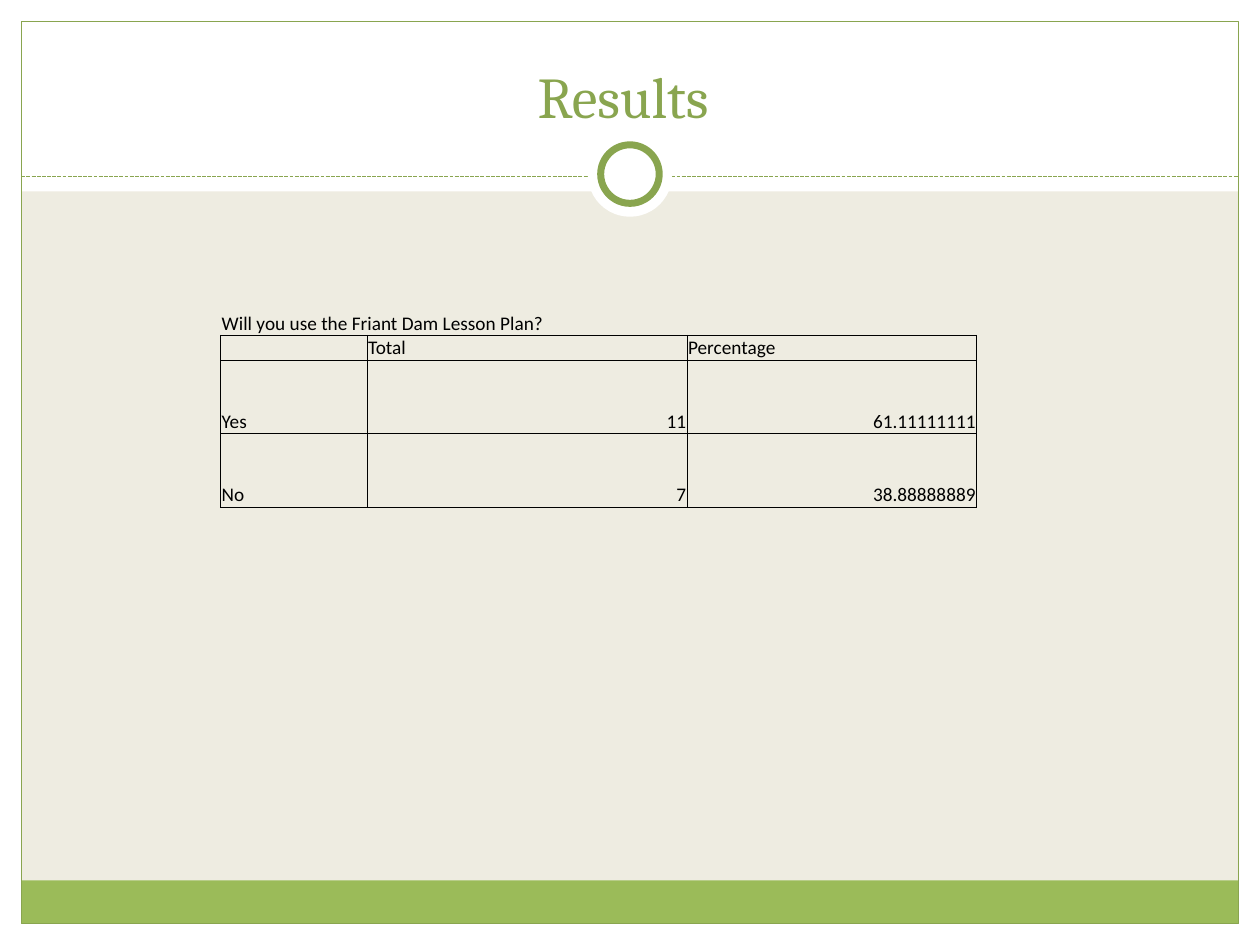
"""Build the Results slide with its survey table."""
from lxml.etree import SubElement
from pptx import Presentation
from pptx.dml.color import RGBColor
from pptx.enum.dml import MSO_LINE
from pptx.enum.shapes import MSO_CONNECTOR, MSO_SHAPE
from pptx.enum.text import MSO_ANCHOR as ANCHOR, PP_ALIGN as ALIGN
from pptx.oxml.ns import qn
from pptx.util import Cm, Pt

WHITE = RGBColor(0xFF, 0xFF, 0xFF)
BLACK = RGBColor(0, 0, 0)
BEIGE = RGBColor(0xEE, 0xEC, 0xE1)
GREEN = RGBColor(0x9B, 0xBB, 0x59)
DARK_GREEN = RGBColor(0x89, 0xA5, 0x4F)
RECT, OVAL = MSO_SHAPE.RECTANGLE, MSO_SHAPE.OVAL
WIDTH, HEIGHT, EDGE = 25.4, 19.05, 0.43
INNER = WIDTH - 2 * EDGE


def set_border(cell, side, visible):
    ln = SubElement(cell._tc.get_or_add_tcPr(), qn(f"a:ln{side}"), w=str(Pt(0.5)))
    if visible:
        fill = SubElement(ln, qn("a:solidFill"))
        SubElement(fill, qn("a:srgbClr"), val=str(BLACK))
    else:
        SubElement(ln, qn("a:noFill"))


prs = Presentation()
prs.slide_width, prs.slide_height = Cm(WIDTH), Cm(HEIGHT)
s = prs.slides.add_slide(prs.slide_layouts[5])
s.background.fill.solid()
s.background.fill.fore_color.rgb = BEIGE

dash = s.shapes.add_connector(MSO_CONNECTOR.STRAIGHT, Cm(EDGE), Cm(3.56), Cm(WIDTH - EDGE), Cm(3.56))
dash.line.color.rgb = DARK_GREEN
dash.line.width = Pt(0.75)
dash.line.dash_style = MSO_LINE.SQUARE_DOT
SubElement(dash._element.spPr, qn("a:effectLst"))

frame_parts = [
    (RECT, 0, HEIGHT - EDGE, WIDTH, EDGE, WHITE, None),
    (RECT, 0, 0, WIDTH, 3.86, WHITE, None),
    (RECT, 0, 0, EDGE, HEIGHT, WHITE, None),
    (RECT, WIDTH - EDGE, 0, EDGE, HEIGHT, WHITE, None),
    (RECT, EDGE, 17.75, INNER, 0.87, GREEN, None),
    (RECT, EDGE, EDGE, INNER, HEIGHT - 2 * EDGE, None, 0.75),
    (OVAL, 11.85, 2.67, 1.7, 1.7, WHITE, None),
    (OVAL, 12.11, 2.92, 1.18, 1.18, WHITE, 4),
]
for kind, x, y, w, h, fill, line in frame_parts:
    if kind == OVAL and line is None:
        s.shapes._spTree.append(dash._element)
    sp = s.shapes.add_shape(kind, Cm(x), Cm(y), Cm(w), Cm(h))
    sp.shadow.inherit = False
    if fill is None:
        sp.fill.background()
    else:
        sp.fill.solid()
        sp.fill.fore_color.rgb = fill
    if line is None:
        sp.line.fill.background()
    else:
        sp.line.color.rgb = DARK_GREEN
        sp.line.width = Pt(line)

title = s.shapes.title
s.shapes._spTree.append(title._element)
place = {"left": Cm(0.84), "top": Cm(0.64), "width": Cm(23.7), "height": Cm(2.11)}
for name, value in place.items():
    setattr(title, name, value)
tf = title.text_frame
tf.vertical_anchor = ANCHOR.BOTTOM
p = tf.paragraphs[0]
p.alignment = ALIGN.CENTER
r = p.add_run()
r.text = "Results "
for name, value in {"name": "Cambria", "size": Pt(33)}.items():
    setattr(r.font, name, value)
r.font.color.rgb = DARK_GREEN

rows = [
    ("Will you use the Friant Dam Lesson Plan?", "", ""),
    ("", "Total", "Percentage"),
    ("Yes", "11", "61.11111111"),
    ("No", "7", "38.88888889"),
]
table = s.shapes.add_table(4, 3, Cm(4.45), Cm(5.28), Cm(15.24), Cm(4.83)).table
for name in ("first_row", "horz_banding"):
    setattr(table, name, False)
for col, width in zip(table.columns, (2.95, 6.45, 5.84)):
    col.width = Cm(width)
for row, height in zip(table.rows, (1.48, 0.41, 1.48, 1.48)):
    row.height = Cm(height)
table.cell(0, 0).merge(table.cell(0, 2))

cell_format = {"margin_left": Cm(0.02), "margin_right": Cm(0.02), "margin_top": Cm(0.02),
               "margin_bottom": 0, "vertical_anchor": ANCHOR.BOTTOM}
for i, values in enumerate(rows):
    for j, text in enumerate(values):
        cell = table.cell(i, j)
        for name, value in cell_format.items():
            setattr(cell, name, value)
        for side in "LRTB":
            set_border(cell, side, i > 0 or side == "B")
        cell.fill.background()
        p = cell.text_frame.paragraphs[0]
        if i > 1 and j > 0:
            p.alignment = ALIGN.RIGHT
        if text:
            r = p.add_run()
            r.text = text
            for name, value in {"name": "Calibri", "size": Pt(11)}.items():
                setattr(r.font, name, value)
            r.font.color.rgb = BLACK
        else:
            SubElement(p._p, qn("a:endParaRPr"), sz="1100")

prs.save("out.pptx")
